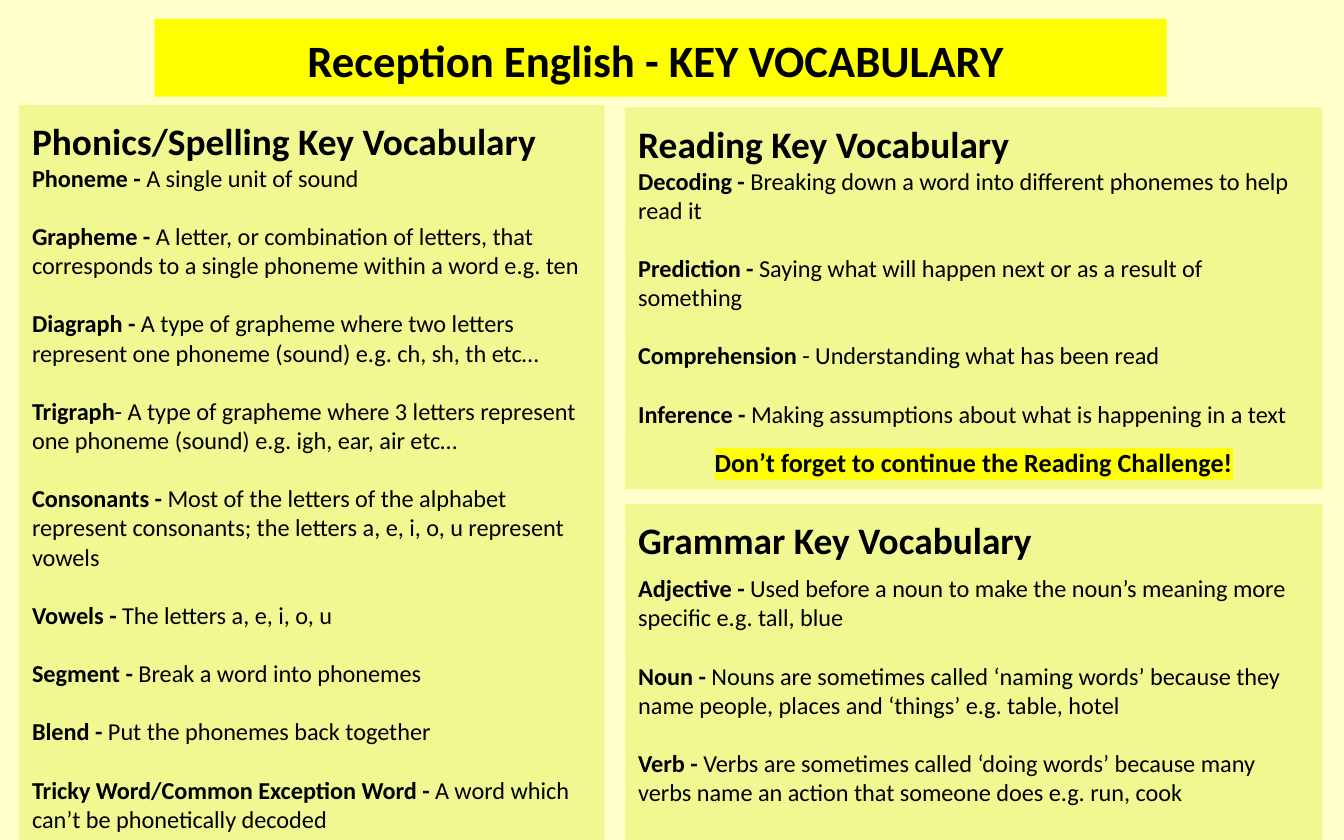
from dataclasses import dataclass

from lxml.etree import SubElement
from pptx import Presentation
from pptx.dml.color import RGBColor
from pptx.enum.text import MSO_ANCHOR, MSO_AUTO_SIZE, PP_ALIGN
from pptx.oxml.ns import qn
from pptx.util import Inches, Pt

FONT = "Calibri"
PAGE_COLOR, PANEL_COLOR, BRIGHT, BLACK = "FFFFCC", "F1F892", "FFFF00", "000000"
TERM_SIZE = 13
TERM_GAP = 15.6  # one line of term text


@dataclass
class Term:
    name: str
    meaning: str


@dataclass
class Panel:
    left: float
    top: float
    width: float
    height: float
    heading: str
    terms: list[Term]
    first_gap: float = 0
    reminder: str = ""


PANELS = [
    Panel(0.14, 0.78, 4.36, 5.47, "Phonics/Spelling Key Vocabulary", [
        Term("Phoneme - ", "A single unit of sound"),
        Term("Grapheme - ", "A letter, or combination of letters, that corresponds "
             "to a single phoneme within a word e.g. ten"),
        Term("Diagraph - ", "A type of grapheme where two letters represent one "
             "phoneme (sound) e.g. ch, sh, th etc…"),
        Term("Trigraph", "- A type of grapheme where 3 letters represent one "
             "phoneme (sound) e.g. igh, ear, air etc…"),
        Term("Consonants - ", "Most of the letters of the alphabet represent "
             "consonants; the letters a, e, i, o, u represent vowels"),
        Term("Vowels - ", "The letters a, e, i, o, u"),
        Term("Segment -", " Break a word into phonemes"),
        Term("Blend - ", "Put the phonemes back together"),
        Term("Tricky Word/Common Exception Word -",
             " A word which can’t be phonetically decoded"),
    ]),
    Panel(4.65, 0.8, 5.19, 2.84, "Reading Key Vocabulary", [
        Term("Decoding -", " Breaking down a word into different phonemes to help read it"),
        Term("Prediction - ", "Saying what will happen next or as a result of something"),
        Term("Comprehension", " - Understanding what has been read"),
        Term("Inference -", " Making assumptions about what is happening in a text"),
    ], reminder="Don’t forget to continue the Reading Challenge!"),
    Panel(4.65, 3.75, 5.19, 2.5, "Grammar Key Vocabulary", [
        Term("Adjective - ", "Used before a noun to make the noun’s meaning more "
             "specific e.g. tall, blue"),
        Term("Noun - ", "Nouns are sometimes called ‘naming words’ because they "
             "name people, places and ‘things’ e.g. table, hotel"),
        Term("Verb - ", "Verbs are sometimes called ‘doing words’ because many "
             "verbs name an action that someone does e.g. run, cook"),
    ], first_gap=6),
]


def set_fill(fill, color: str) -> None:
    fill.solid()
    fill.fore_color.rgb = RGBColor.from_string(color)


def add_span(para, text: str, *, size: float, bold: bool = True, highlight: str = "") -> None:
    span = para.add_run()
    span.text = text
    span.font.size = Pt(size)
    span.font.bold = bold
    set_fill(span.font.fill, BLACK)
    if highlight:
        mark = SubElement(span.font._element, qn("a:highlight"))
        SubElement(mark, qn("a:srgbClr"), val=highlight)
    span.font.name = FONT


def prepare_frame(box, color: str):
    """Fill the box and return its text frame, set from the top with even insets."""
    set_fill(box.fill, color)
    frame = box.text_frame
    frame.word_wrap = True
    frame.auto_size = MSO_AUTO_SIZE.NONE
    frame.vertical_anchor = MSO_ANCHOR.TOP
    frame.margin_left = frame.margin_right = Inches(0.1)
    frame.margin_top = frame.margin_bottom = Inches(0.1)
    return frame


def add_para(frame, gap: float = 0):
    para = frame.add_paragraph()
    para.space_before = Pt(gap)
    return para


def add_title(page, text: str) -> None:
    title = page.shapes.title
    title.left, title.top = Inches(1.15), Inches(0.14)
    title.width, title.height = Inches(7.53), Inches(0.58)
    para = prepare_frame(title, BRIGHT).paragraphs[0]
    para.alignment = PP_ALIGN.CENTER
    add_span(para, text, size=24)


def add_panel(page, panel: Panel) -> None:
    box = page.shapes.add_textbox(Inches(panel.left), Inches(panel.top),
                                  Inches(panel.width), Inches(panel.height))
    frame = prepare_frame(box, PANEL_COLOR)
    add_span(frame.paragraphs[0], panel.heading, size=20)
    for index, term in enumerate(panel.terms):
        para = add_para(frame, TERM_GAP if index else panel.first_gap)
        add_span(para, term.name, size=TERM_SIZE)
        add_span(para, term.meaning, size=TERM_SIZE, bold=False)
    if panel.reminder:
        para = add_para(frame, 9.8)
        para.alignment = PP_ALIGN.CENTER
        add_span(para, panel.reminder, size=14, highlight=BRIGHT)


def main() -> None:
    deck = Presentation()
    deck.slide_width, deck.slide_height = Inches(10), Inches(6.25)
    page = deck.slides.add_slide(deck.slide_layouts.get_by_name("Title Only"))
    set_fill(page.background.fill, PAGE_COLOR)
    add_title(page, "Reception English - KEY VOCABULARY ")
    for panel in PANELS:
        add_panel(page, panel)
    deck.save("out.pptx")


if __name__ == "__main__":
    main()
